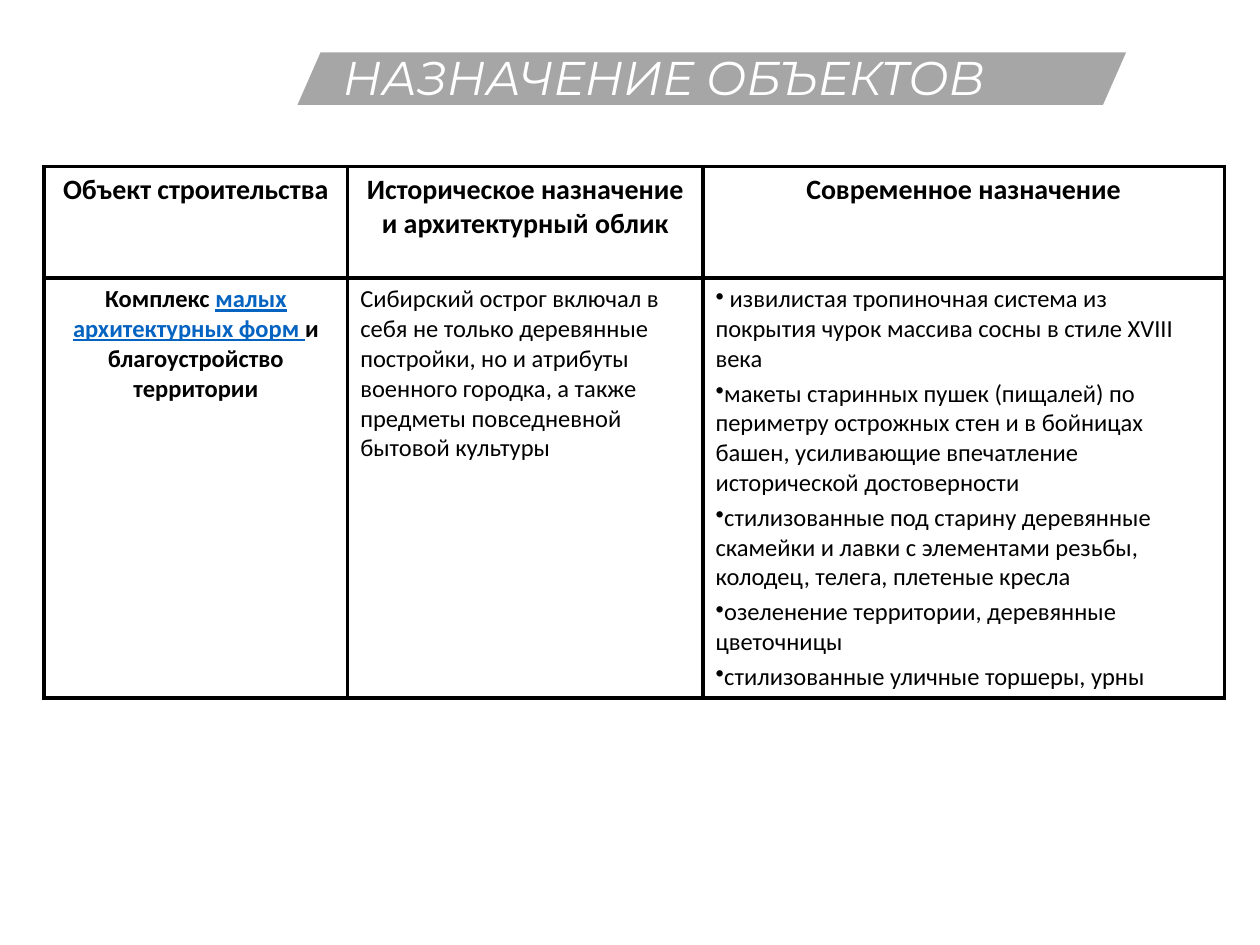
"""Build a slide with a slanted title banner and a table of building purposes."""
from lxml.etree import SubElement
from pptx import Presentation
from pptx.dml.color import RGBColor
from pptx.enum.shapes import MSO_SHAPE
from pptx.enum.text import MSO_ANCHOR, MSO_AUTO_SIZE, PP_ALIGN
from pptx.oxml.ns import qn
from pptx.util import Pt

BLACK = RGBColor(0x00, 0x00, 0x00)
WHITE = RGBColor(0xFF, 0xFF, 0xFF)
GRAY = RGBColor(0xA6, 0xA6, 0xA6)
LINK_BLUE = RGBColor(0x05, 0x63, 0xC1)

COLUMN_WIDTHS = [173.5, 203, 298]
ROW_HEIGHTS = [64, 239]
HEADERS = [
    "Объект строительства",
    "Историческое назначение и архитектурный облик",
    "Современное назначение",
]
OBJECT_SPANS = ["Комплекс ", "малых архитектурных форм ", "и благоустройство территории"]
HISTORY = (
    "Сибирский острог включал в себя не только деревянные постройки, но и атрибуты "
    "военного городка, а также предметы повседневной бытовой культуры"
)
MODERN_USES = [
    " извилистая тропиночная система из покрытия чурок массива сосны в стиле XVIII века",
    "макеты старинных пушек (пищалей) по периметру острожных стен и в бойницах башен, "
    "усиливающие впечатление исторической достоверности",
    "стилизованные под старину деревянные скамейки и лавки с элементами резьбы, "
    "колодец, телега, плетеные кресла",
    "озеленение территории, деревянные цветочницы",
    "стилизованные уличные торшеры, урны",
]


def format_span(span, size, bold=False, color=BLACK):
    span.font.name = "Calibri"
    span.font.size = Pt(size)
    span.font.bold = bold
    span.font.color.rgb = color


def add_borders(cell):
    properties = cell._tc.get_or_add_tcPr()
    for side in ("a:lnL", "a:lnR", "a:lnT", "a:lnB"):
        line = SubElement(properties, qn(side), w=str(Pt(2.25)))
        fill = SubElement(line, qn("a:solidFill"))
        SubElement(fill, qn("a:srgbClr"), val=str(BLACK))


deck = Presentation()
deck.slide_width, deck.slide_height = Pt(720), Pt(540)
page = deck.slides.add_slide(deck.slide_layouts[5])

frame = page.shapes.add_table(2, 3, Pt(25.2), Pt(95), Pt(sum(COLUMN_WIDTHS)), Pt(sum(ROW_HEIGHTS)))
table = frame.table
table.first_row = table.horz_banding = False
for column, width in zip(table.columns, COLUMN_WIDTHS):
    column.width = Pt(width)
for row, height in zip(table.rows, ROW_HEIGHTS):
    row.height = Pt(height)
for cell in table.iter_cells():
    add_borders(cell)
    cell.fill.background()

for cell, header in zip(table.rows[0].cells, HEADERS):
    cell.text_frame.text = header
    paragraph = cell.text_frame.paragraphs[0]
    paragraph.alignment = PP_ALIGN.CENTER
    format_span(paragraph.runs[0], 16, bold=True)

object_cell, history_cell, modern_cell = table.rows[1].cells

paragraph = object_cell.text_frame.paragraphs[0]
paragraph.alignment = PP_ALIGN.CENTER
for text in OBJECT_SPANS:
    span = paragraph.add_run()
    span.text = text
    format_span(span, 14, bold=True)
link = paragraph.runs[1]
link.font.color.rgb = LINK_BLUE
link.font.underline = True

history_cell.text_frame.text = HISTORY
format_span(history_cell.text_frame.paragraphs[0].runs[0], 14)

modern_cell.text_frame.text = "\n".join(MODERN_USES)
for index, paragraph in enumerate(modern_cell.text_frame.paragraphs):
    if index:
        paragraph.space_before = Pt(2.8)
    properties = paragraph._p.get_or_add_pPr()
    properties.set("marL", "0")
    properties.set("indent", "0")
    SubElement(properties, qn("a:buChar"), char="•")
    format_span(paragraph.runs[0], 14)

banner = page.shapes.add_shape(MSO_SHAPE.PARALLELOGRAM, Pt(170), Pt(30), Pt(473.5), Pt(30))
banner.adjustments[0] = 0.44
banner.shadow.inherit = False
banner.fill.solid()
banner.fill.fore_color.rgb = GRAY
banner.line.fill.background()

title = page.shapes.title
title.left, title.top, title.width, title.height = Pt(191), Pt(0), Pt(494), Pt(91.5)
title.element.getparent().append(title.element)
title_text = title.text_frame
title_text.text = "НАЗНАЧЕНИЕ ОБЪЕКТОВ"
title_text.auto_size = MSO_AUTO_SIZE.NONE
title_text.word_wrap = True
title_text.vertical_anchor = MSO_ANCHOR.MIDDLE
title_text.margin_left = title_text.margin_right = Pt(5)
title_text.margin_top = title_text.margin_bottom = Pt(3)
paragraph = title_text.paragraphs[0]
paragraph.alignment = PP_ALIGN.LEFT
paragraph.line_spacing = 0.9
font = paragraph.runs[0].font
font.name = "Montserrat"
font.size = Pt(27)
font.italic = True
font.color.rgb = WHITE

deck.save("out.pptx")
